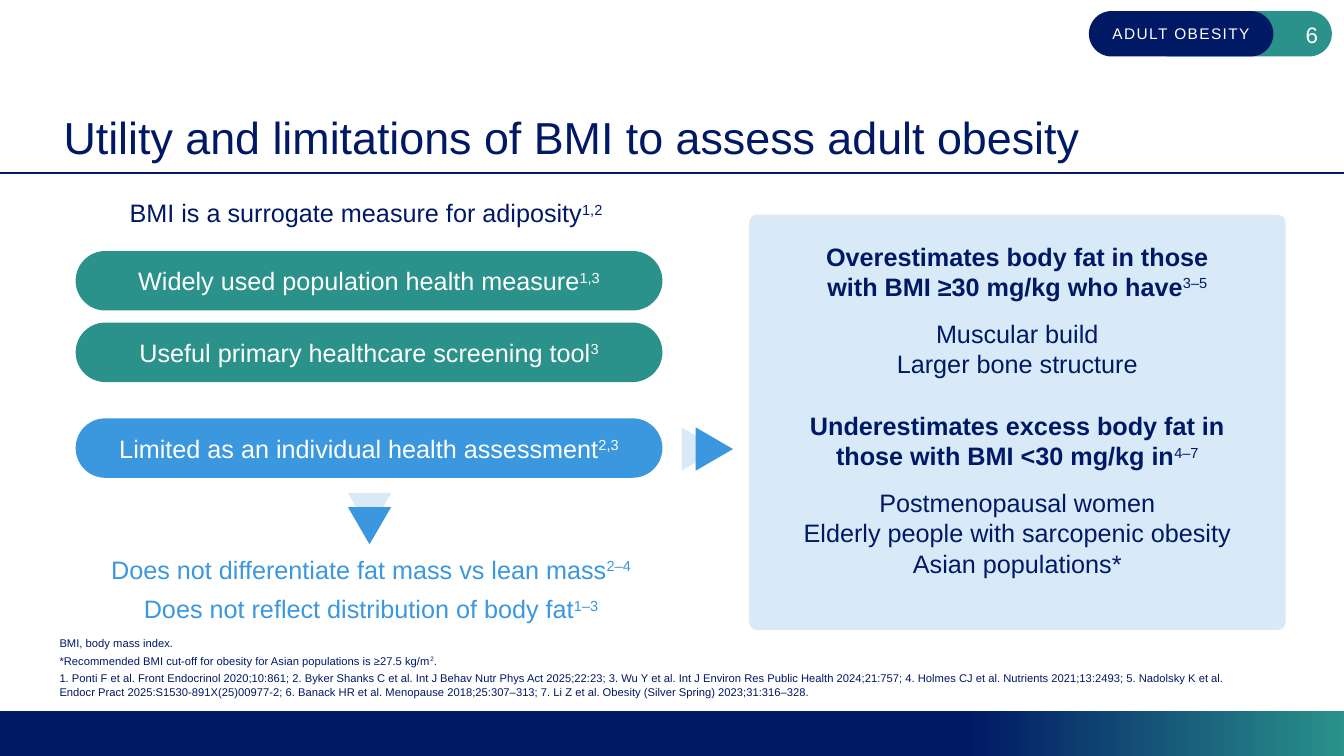
"""Build the slide on the utility and limitations of BMI in adult obesity."""
import pptx
import pptx.dml.color
import pptx.enum.shapes
import pptx.enum.text
import pptx.oxml
import pptx.oxml.ns
import pptx.util

Inches = pptx.util.Inches
SHAPES = pptx.enum.shapes.MSO_SHAPE
ALIGN = pptx.enum.text.PP_ALIGN
ANCHOR = pptx.enum.text.MSO_ANCHOR
COLOURS = {"navy": "001965", "teal": "2A918B", "blue": "3B97DE",
           "pale": "D8EAF8", "white": "FFFFFF"}
SLIDE_WIDTH, SLIDE_HEIGHT = 13.33, 7.5
PILL_INSETS = (0.08, 0.04)
TEXT_INSETS = (0.1, 0.05)


def rgb(name):
    """Return the named colour."""
    return pptx.dml.color.RGBColor.from_string(COLOURS[name])


def add_block(parent, box, kind, colour, radius=None, rotation=0):
    """Add a plain filled shape to a slide or group."""
    block = parent.shapes.add_shape(kind, *map(Inches, box))
    block.shadow.inherit = False
    block.fill.solid()
    block.fill.fore_color.rgb = rgb(colour)
    block.line.fill.background()
    block.rotation = rotation
    if radius is not None:
        block.adjustments[0] = radius
    return block


def write(shape, paragraphs, colour="navy", size=18, align=ALIGN.CENTER,
          anchor=ANCHOR.TOP, insets=TEXT_INSETS, after=0, spacing=None):
    """Fill a shape with paragraphs of (text, superscript, ...) parts."""
    across, down = map(Inches, insets)
    frame = shape.text_frame
    frame_format = {"word_wrap": True, "vertical_anchor": anchor,
                    "margin_left": across, "margin_right": across,
                    "margin_top": down, "margin_bottom": down}
    for name, value in frame_format.items():
        setattr(frame, name, value)
    for index, parts in enumerate(paragraphs):
        paragraph = frame.add_paragraph() if index else frame.paragraphs[0]
        paragraph.alignment = align
        paragraph.space_after = pptx.util.Pt(after)
        for position, part in enumerate(parts):
            run = paragraph.add_run()
            run.text = part
            font_format = {"name": "Arial", "size": pptx.util.Pt(size), "bold": False}
            for name, value in font_format.items():
                setattr(run.font, name, value)
            run.font.color.rgb = rgb(colour)
            properties = run._r.get_or_add_rPr()
            if position % 2:
                properties.set("baseline", "30000")
            if spacing:
                properties.set("spc", str(spacing))
    return frame


def add_text(slide, box, paragraphs, **text_format):
    """Add a text box and return its text frame."""
    return write(slide.shapes.add_textbox(*map(Inches, box)), paragraphs, **text_format)


def add_pill(parent, box, paragraphs, colour, **text_format):
    """Add a fully rounded bar with white text."""
    pill = add_block(parent, box, SHAPES.ROUNDED_RECTANGLE, colour, 0.5)
    write(pill, paragraphs, colour="white", anchor=ANCHOR.MIDDLE,
          insets=PILL_INSETS, **text_format)


def add_footer_band(slide, box):
    """Add the gradient band along the bottom."""
    band = add_block(slide, box, SHAPES.RECTANGLE, "navy")
    band.fill.gradient()
    band.fill.gradient_angle = 0
    for stop, (position, colour) in zip(band.fill.gradient_stops,
                                        ((0.72, "navy"), (1, "teal"))):
        stop.position = position
        stop.color.rgb = rgb(colour)


def add_section_badge(slide, box):
    """Add the section name and page number in the corner."""
    left, top, width, height = box
    pill_width = 1.83
    badge = slide.shapes.add_group_shape()
    add_block(badge, (left + width - pill_width, top, pill_width, height),
              SHAPES.ROUNDED_RECTANGLE, "teal", 0.5)
    add_pill(badge, (left, top, pill_width, height), [("ADULT OBESITY",)],
             "navy", size=11, spacing=100)
    add_text(slide, (left + 1.74, top + 0.03, 0.63, 0.4), [("6",)], colour="white",
             size=16, align=ALIGN.RIGHT, anchor=ANCHOR.MIDDLE)


def add_heading(slide, box):
    """Add the title and the rule below it."""
    left, top, width, height = box
    add_text(slide, box, [("Utility and limitations of BMI to assess adult obesity",)],
             size=32, align=ALIGN.LEFT, anchor=ANCHOR.BOTTOM, insets=(0, 0))
    rule_top = Inches(top + height + 0.1)
    rule = slide.shapes.add_connector(pptx.enum.shapes.MSO_CONNECTOR.STRAIGHT,
                                      0, rule_top, Inches(SLIDE_WIDTH), rule_top)
    rule.line.color.rgb = rgb("navy")
    rule.line.width = pptx.util.Pt(1.5)
    rule._element.spPr.append(pptx.oxml.parse_xml(
        "<a:effectLst %s/>" % pptx.oxml.ns.nsdecls("a")))


def add_double_arrow(slide, box, rotation, step):
    """Add a pale triangle with a blue one shifted along its direction."""
    left, top, width, height = box
    arrow = slide.shapes.add_group_shape()
    for index, colour in enumerate(("pale", "blue")):
        add_block(arrow, (left + index * step[0], top + index * step[1], width, height),
                  SHAPES.ISOSCELES_TRIANGLE, colour, rotation=rotation)


def add_measure_column(slide, box):
    """Add the uses of BMI, its limitation and the arrows from it."""
    left, top, width, height = box
    add_text(slide, (left, top, width, 0.4),
             [("BMI is a surrogate measure for adiposity", "1,2")])
    pills = (
        (0.58, "teal", "Widely used population health measure", "1,3"),
        (1.29, "teal", "Useful primary healthcare screening tool", "3"),
        (2.24, "blue", "Limited as an individual health assessment", "2,3"),
    )
    for offset, colour, *parts in pills:
        add_pill(slide, (left + 0.16, top + offset, 5.82, 0.59), [parts], colour)
    add_double_arrow(slide, (left + 2.86, top + 2.98, 0.43, 0.37), 180, (0, 0.14))
    add_double_arrow(slide, (left + 6.14, top + 2.36, 0.43, 0.37), 90, (0.14, 0))
    drawbacks = (("Does not differentiate fat mass vs lean mass", "2–4"),
                 ("Does not reflect distribution of body fat", "1–3"))
    for index, drawback in enumerate(drawbacks):
        add_text(slide, (left + 0.05, top + 3.54 + index * 0.39, width, 0.4),
                 [drawback], colour="blue")


def add_misestimate_panel(slide, box):
    """Add the panel on where BMI over- and underestimates body fat."""
    left, top, width, height = box
    add_block(slide, box, SHAPES.ROUNDED_RECTANGLE, "pale", 0.019)
    groups = (
        (0.21, 4.33, 1.55,
         [("Overestimates body fat in those with BMI ≥30 mg/kg who have", "3–5"),
          ("Muscular build",), ("Larger bone structure",)]),
        (1.89, 4.47, 1.79,
         [("Underestimates excess body fat in those with BMI <30 mg/kg in", "4–7"),
          ("Postmenopausal women",), ("Elderly people with sarcopenic obesity",),
          ("Asian populations*",)]),
    )
    for offset, text_width, text_height, lines in groups:
        frame = add_text(slide, (left + (width - text_width) / 2, top + offset,
                                 text_width, text_height), lines)
        frame.paragraphs[0].runs[0].font.bold = True
        frame.paragraphs[1].space_before = pptx.util.Pt(12)


def add_footnotes(slide, box):
    """Add the abbreviation, the cut-off note and the references."""
    references = (
        "1. Ponti F et al. Front Endocrinol 2020;10:861; "
        "2. Byker Shanks C et al. Int J Behav Nutr Phys Act 2025;22:23; "
        "3. Wu Y et al. Int J Environ Res Public Health 2024;21:757; "
        "4. Holmes CJ et al. Nutrients 2021;13:2493; "
        "5. Nadolsky K et al. Endocr Pract 2025:S1530-891X(25)00977-2; "
        "6. Banack HR et al. Menopause 2018;25:307–313; "
        "7. Li Z et al. Obesity (Silver Spring) 2023;31:316–328.")
    cut_off = "*Recommended BMI cut-off for obesity for Asian populations is ≥27.5 kg/m"
    add_text(slide, box, [("BMI, body mass index.",), (cut_off, "2", "."), (references,)],
             size=8, align=ALIGN.LEFT, anchor=ANCHOR.BOTTOM, insets=(0, 0), after=3)


def main():
    """Create the presentation and save it."""
    presentation = pptx.Presentation()
    presentation.slide_width = Inches(SLIDE_WIDTH)
    presentation.slide_height = Inches(SLIDE_HEIGHT)
    slide = presentation.slides.add_slide(presentation.slide_layouts[6])
    add_footer_band(slide, (0, 7.05, SLIDE_WIDTH, 0.45))
    add_section_badge(slide, (10.8, 0.11, 2.41, 0.45))
    add_heading(slide, (0.63, 0.44, 11.92, 1.18))
    add_measure_column(slide, (0.59, 1.91, 6.08, 4.33))
    add_misestimate_panel(slide, (7.43, 2.13, 5.32, 4.12))
    add_footnotes(slide, (0.59, 6.58, 11.92, 0.35))
    presentation.save("out.pptx")


if __name__ == "__main__":
    main()
